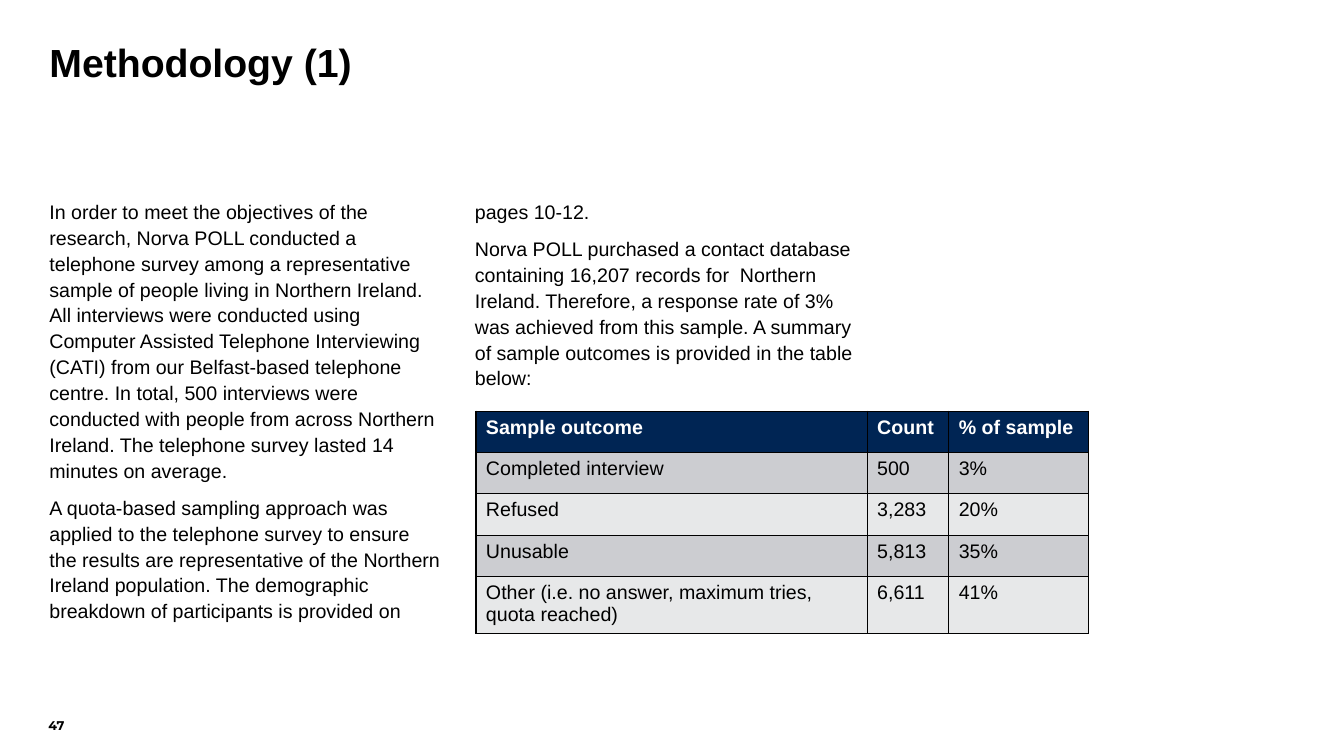
from dataclasses import dataclass

from lxml import etree
from pptx import Presentation
from pptx import util as u
from pptx.dml.color import RGBColor
from pptx.enum import text
from pptx.oxml import ns


@dataclass(frozen=True)
class Theme:
    font: str = "Arial"
    number_font: str = "Montserrat"
    ink: str = "000000"
    header_ink: str = "FFFFFF"
    header_fill: str = "002554"
    row_fills: tuple = ("CCCDD1", "E7E8E9")
    title_size: int = 28
    body_size: int = 14
    number_size: int = 9


BODY = [
    "In order to meet the objectives of the research, Norva POLL conducted a telephone survey "
    "among a representative sample of people living in Northern Ireland. All interviews were "
    "conducted using Computer Assisted Telephone Interviewing (CATI) from our Belfast-based "
    "telephone centre. In total, 500 interviews were conducted with people from across Northern "
    "Ireland. The telephone survey lasted 14 minutes on average.",
    "A quota-based sampling approach was applied to the telephone survey to ensure the results "
    "are representative of the Northern Ireland population. The demographic breakdown of "
    "participants is provided on pages 10-12.",
    "Norva POLL purchased a contact database containing 16,207 records for  Northern Ireland. "
    "Therefore, a response rate of 3% was achieved from this sample. A summary of sample "
    "outcomes is provided in the table below:",
]
OUTCOMES = [
    ("Sample outcome", "Count", "% of sample"),
    ("Completed interview", "500", "3%"),
    ("Refused", "3,283", "20%"),
    ("Unusable", "5,813", "35%"),
    ("Other (i.e. no answer, maximum tries, quota reached)", "6,611", "41%"),
]


def write(frame, paragraphs, *, size, font, color, bold=False, line=1.0, space=0):
    """Fill a text frame; space is the gap in points before and after each paragraph."""
    for index, words in enumerate(paragraphs):
        para = frame.add_paragraph() if index else frame.paragraphs[0]
        para.line_spacing = line
        para.space_before = u.Pt(space if index else 0)
        para.space_after = u.Pt(space)
        span = para.add_run()
        span.text = words
        span.font.size = u.Pt(size)
        span.font.name = font
        span.font.bold = bold
        span.font.color.rgb = RGBColor.from_string(color)


def add_borders(cell, color, points=1):
    properties = cell._tc.get_or_add_tcPr()
    for side in ("a:lnL", "a:lnR", "a:lnT", "a:lnB"):
        border = etree.SubElement(properties, ns.qn(side), w=str(u.Pt(points)))
        fill = etree.SubElement(border, ns.qn("a:solidFill"))
        etree.SubElement(fill, ns.qn("a:srgbClr"), val=color)


class SlideBuilder:
    def __init__(self, page, theme):
        self.page = page
        self.theme = theme

    def text_box(self, place, paragraphs, *, anchor=text.MSO_ANCHOR.TOP,
                 columns=1, gap=0, **style):
        box = self.page.shapes.add_textbox(*map(u.Inches, place))
        frame = box.text_frame
        frame.word_wrap = True
        frame.vertical_anchor = anchor
        frame.margin_left = frame.margin_right = frame.margin_top = frame.margin_bottom = 0
        if columns > 1:
            body = frame._txBody.bodyPr
            body.set("numCol", str(columns))
            body.set("spcCol", str(u.Inches(gap)))
        write(frame, paragraphs, **style)

    def table(self, left, top, widths, row_height, rows):
        theme = self.theme
        frame = self.page.shapes.add_table(
            len(rows), len(widths), u.Inches(left), u.Inches(top),
            u.Inches(sum(widths)), u.Inches(row_height * len(rows)))
        grid = frame.table
        for column, width in zip(grid.columns, widths):
            column.width = u.Inches(width)
        for r, values in enumerate(rows):
            grid.rows[r].height = u.Inches(row_height)
            header = r == 0
            fill = theme.header_fill if header else theme.row_fills[(r - 1) % 2]
            for c, value in enumerate(values):
                cell = grid.cell(r, c)
                add_borders(cell, theme.ink)
                cell.fill.solid()
                cell.fill.fore_color.rgb = RGBColor.from_string(fill)
                write(cell.text_frame, [value], size=theme.body_size, font=theme.font,
                      color=theme.header_ink if header else theme.ink, bold=header)


def main():
    deck = Presentation()
    deck.slide_width, deck.slide_height = u.Inches(13.33), u.Inches(7.5)
    theme = Theme()
    slide = SlideBuilder(deck.slides.add_slide(deck.slide_layouts[6]), theme)

    slide.text_box((0.49, 0.43, 10.22, 0.85), ["Methodology (1)"], size=theme.title_size,
                   font=theme.font, color=theme.ink, bold=True, line=0.9)
    slide.text_box((0.49, 1.96, 12.33, 4.24), BODY, columns=3, gap=0.33,
                   size=theme.body_size, font=theme.font, color=theme.ink, line=1.1, space=4)
    slide.table(4.72, 4.08, (3.88, 0.81, 1.39), 0.41, OUTCOMES)
    slide.text_box((0.48, 6.87, 0.33, 0.4), ["47"], anchor=text.MSO_ANCHOR.BOTTOM,
                   size=theme.number_size, font=theme.number_font, color=theme.ink, bold=True)
    deck.save("out.pptx")


if __name__ == "__main__":
    main()
